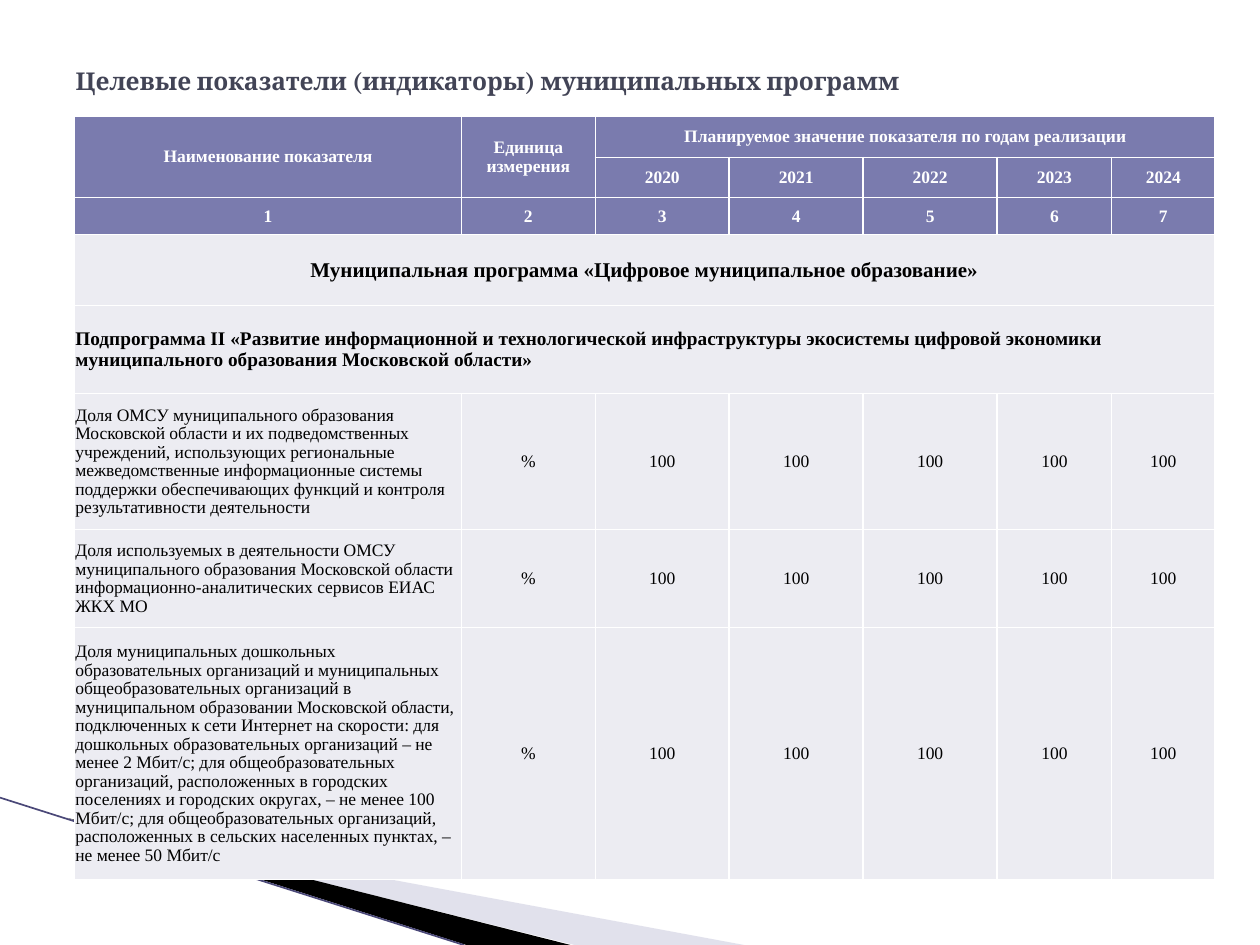
"""Build the slide with target indicators of municipal programmes."""
import lxml.etree
import pptx
import pptx.dml.color
import pptx.enum.text
import pptx.oxml.ns
import pptx.util

Cm = pptx.util.Cm
Pt = pptx.util.Pt
ALIGN = pptx.enum.text.PP_ALIGN
MIDDLE = pptx.enum.text.MSO_ANCHOR.MIDDLE
qn = pptx.oxml.ns.qn

COLORS = {
    "title": "424456", "header": "7A7BAE", "body": "ECECF2", "white": "FFFFFF",
    "black": "000000", "wedge": "B6B6D1", "edge": "4A4878",
}
TITLE = "Целевые показатели (индикаторы) муниципальных программ"
YEARS = ["2020", "2021", "2022", "2023", "2024"]
HEADER = [
    ["Наименование показателя", "Единица измерения",
     "Планируемое значение показателя по годам реализации"],
    ["", "", *YEARS],
    [str(number) for number in range(1, 8)],
]
PROGRAM = "Муниципальная программа «Цифровое муниципальное образование»"
SUBPROGRAM = (
    "Подпрограмма II «Развитие информационной и технологической инфраструктуры "
    "экосистемы цифровой экономики муниципального образования Московской области»"
)
INDICATORS = [
    "Доля ОМСУ муниципального образования Московской области и их "
    "подведомственных учреждений, использующих региональные межведомственные "
    "информационные системы поддержки обеспечивающих функций и контроля "
    "результативности деятельности",
    "Доля используемых в деятельности ОМСУ муниципального образования Московской "
    "области информационно-аналитических сервисов ЕИАС ЖКХ МО",
    "Доля муниципальных дошкольных образовательных организаций и муниципальных "
    "общеобразовательных организаций в муниципальном образовании Московской "
    "области, подключенных к сети Интернет на скорости: для дошкольных "
    "образовательных организаций – не менее 2 Мбит/с; для общеобразовательных "
    "организаций, расположенных в городских поселениях и городских округах, – "
    "не менее 100 Мбит/с; для общеобразовательных организаций, расположенных в "
    "сельских населенных пунктах, – не менее 50 Мбит/с",
]
ROWS = HEADER + [[PROGRAM], [SUBPROGRAM]]
ROWS += [[name, "%"] + ["100"] * len(YEARS) for name in INDICATORS]
MERGES = [((0, 0), (1, 0)), ((0, 1), (1, 1)), ((0, 2), (0, 6)),
          ((3, 0), (3, 6)), ((4, 0), (4, 6))]
WIDTHS = [7.8, 2.7, 2.7, 2.7, 2.7, 2.31, 2.08]
HEIGHTS = [0.83, 0.81, 0.75, 1.43, 1.77, 2.74, 1.98, 5.08]
WEDGES = [
    ("wedge", 40, [(1.4, 16.53), (15, 19.05), (11.58, 19.05)]),
    ("black", 100, [(1.36, 16.49), (11.5, 19.05), (9.4, 19.05)]),
]
EDGE = [(0, 16.08), (9.35, 19.05)]


def rgb(name):
    return pptx.dml.color.RGBColor.from_string(COLORS[name])


def style(para, size, bold, color, font="Times New Roman"):
    para.font.size = Pt(size)
    para.font.bold = bold
    para.font.name = font
    para.font.color.rgb = rgb(color)


def add_wedge(page, color, opacity, points):
    start, *rest = [(Cm(x), Cm(y)) for x, y in points]
    builder = page.shapes.build_freeform(*start)
    builder.add_line_segments(rest)
    wedge = builder.convert_to_shape()
    wedge.shadow.inherit = False
    wedge.fill.solid()
    wedge.fill.fore_color.rgb = rgb(color)
    wedge.line.fill.background()
    if opacity < 100:
        tint = wedge.fill._xPr.find(".//" + qn("a:srgbClr"))
        lxml.etree.SubElement(tint, qn("a:alpha"), val=str(opacity * 1000))


def add_edge(page):
    (x1, y1), (x2, y2) = EDGE
    line = page.shapes.add_connector(
        pptx.enum.shapes.MSO_CONNECTOR.STRAIGHT, Cm(x1), Cm(y1), Cm(x2), Cm(y2))
    line.line.color.rgb = rgb("edge")
    line.line.width = Pt(0.95)
    lxml.etree.SubElement(line._element.spPr, qn("a:effectLst"))


def add_title(page):
    title = page.shapes.title
    title.left, title.top, title.width, title.height = map(Cm, (1.27, 0.76, 22.86, 1.75))
    frame = title.text_frame
    frame.text = TITLE
    frame.word_wrap = True
    frame.auto_size = pptx.enum.text.MSO_AUTO_SIZE.NONE
    frame.vertical_anchor = MIDDLE
    para = frame.paragraphs[0]
    para.alignment = ALIGN.LEFT
    style(para, 14, True, "title", "Cambria")
    title._element.getparent().append(title._element)


def add_borders(cell):
    properties = cell._tc.get_or_add_tcPr()
    for side in ("lnL", "lnR", "lnT", "lnB"):
        border = lxml.etree.SubElement(properties, qn("a:" + side), w=str(Pt(1)))
        fill = lxml.etree.SubElement(border, qn("a:solidFill"))
        lxml.etree.SubElement(fill, qn("a:srgbClr"), val=COLORS["white"])


def format_cell(cell, row, column):
    is_header = row < len(HEADER)
    is_indicator = row > 4
    add_borders(cell)
    cell.fill.solid()
    cell.fill.fore_color.rgb = rgb("header" if is_header else "body")
    cell.vertical_anchor = MIDDLE
    cell.margin_left = cell.margin_right = cell.margin_top = Cm(0.02)
    cell.margin_bottom = 0
    para = cell.text_frame.paragraphs[0]
    para.line_spacing = 0.96
    is_name = column == 0 and row >= 4
    para.alignment = ALIGN.LEFT if is_name else ALIGN.CENTER
    if is_name and is_indicator:
        para.space_after = Pt(10)
    style(para, {3: 12, 4: 11}.get(row, 10), not is_indicator,
          "white" if is_header else "black")


def add_indicator_table(page):
    table = page.shapes.add_table(
        len(ROWS), len(WIDTHS), Cm(1.5), Cm(2.34),
        Cm(sum(WIDTHS)), Cm(sum(HEIGHTS))).table
    table.first_row = table.horz_banding = False
    for column, width in zip(table.columns, WIDTHS):
        column.width = Cm(width)
    for row, height in zip(table.rows, HEIGHTS):
        row.height = Cm(height)
    for i, texts in enumerate(ROWS):
        for j, text in enumerate(texts):
            table.cell(i, j).text = text
        for j in range(len(WIDTHS)):
            format_cell(table.cell(i, j), i, j)
    for first, last in MERGES:
        table.cell(*first).merge(table.cell(*last))


def main():
    deck = pptx.Presentation()
    deck.slide_width, deck.slide_height = Cm(25.4), Cm(19.05)
    page = deck.slides.add_slide(deck.slide_layouts[5])
    for wedge in WEDGES:
        add_wedge(page, *wedge)
    add_edge(page)
    add_title(page)
    add_indicator_table(page)
    deck.save("out.pptx")


if __name__ == "__main__":
    main()
